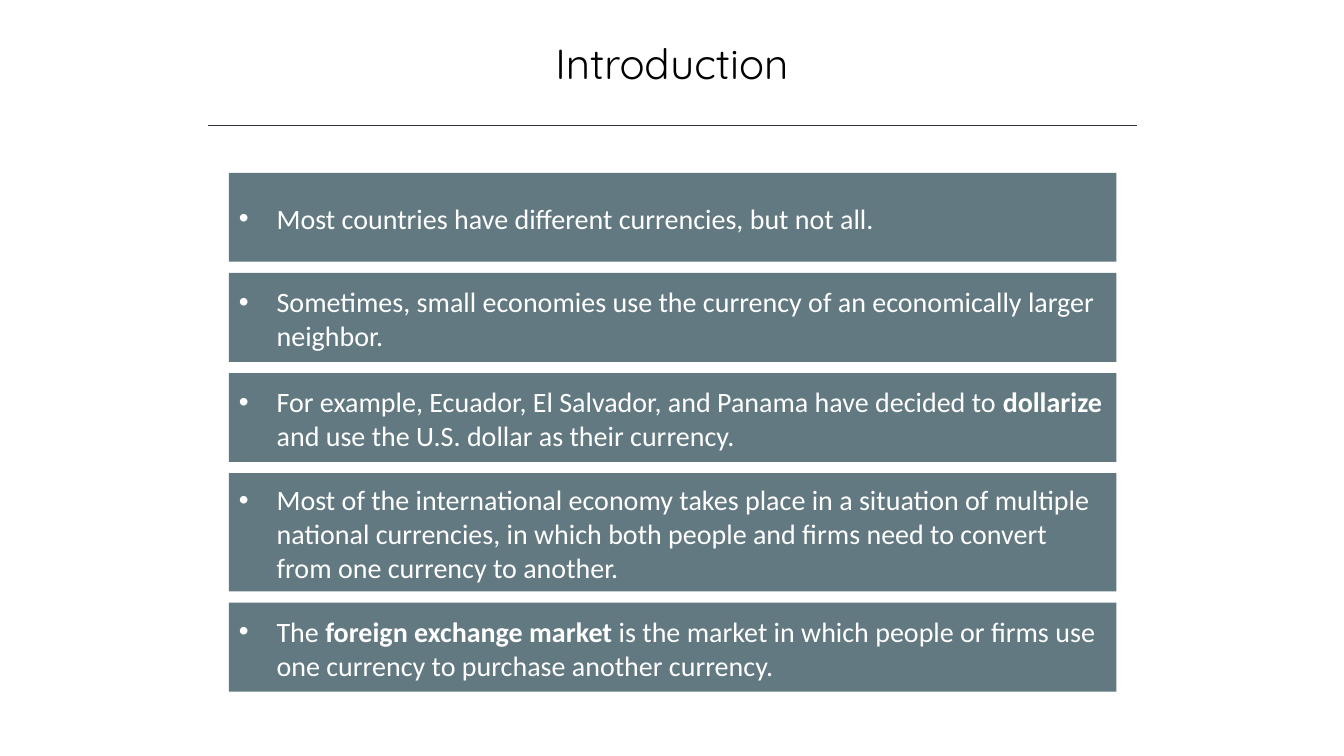
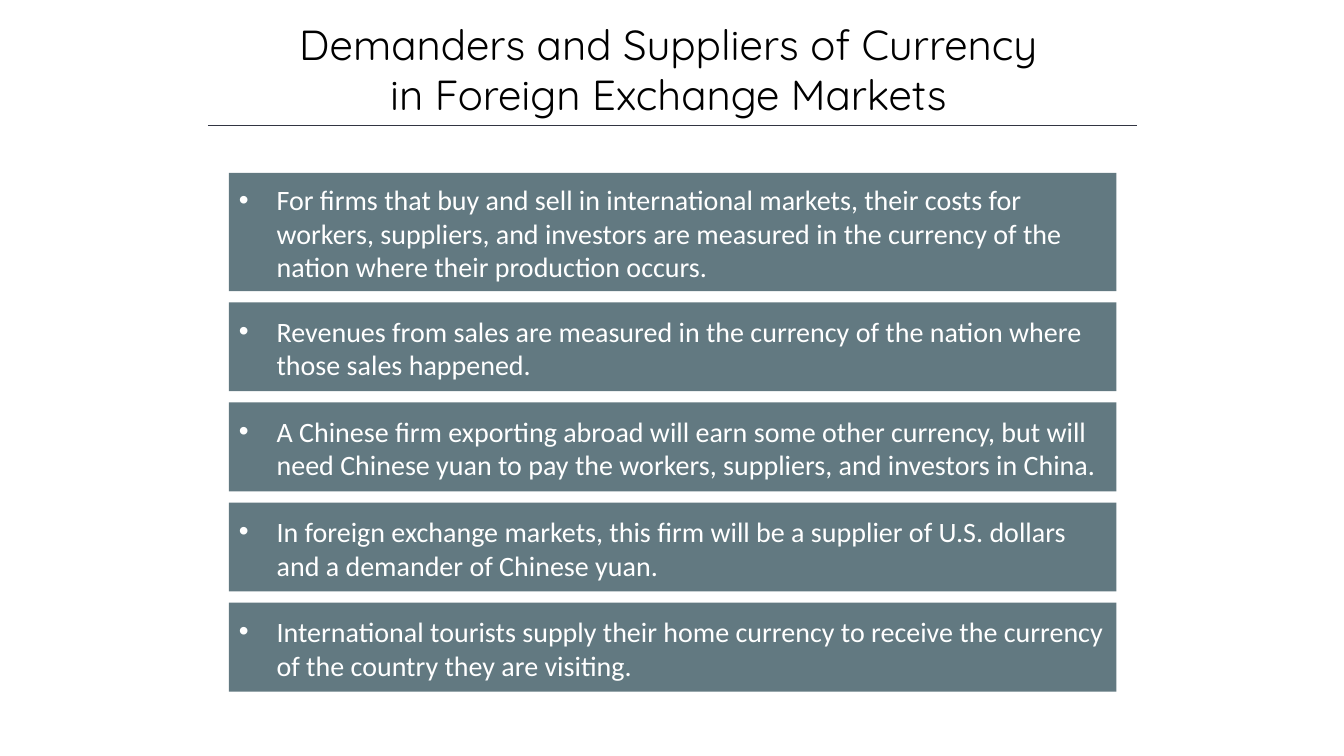
from dataclasses import dataclass

from lxml.etree import SubElement
from pptx import Presentation
from pptx.dml.color import RGBColor
from pptx.enum.shapes import MSO_CONNECTOR, MSO_SHAPE
from pptx.enum.text import MSO_ANCHOR, PP_ALIGN
from pptx.oxml.ns import qn
from pptx.util import Pt


@dataclass(frozen=True)
class Theme:
    ink: str = "000000"
    rule: str = "323542"
    card: str = "627981"
    on_card: str = "FFFFFF"
    title_font: str = "Quicksand"
    body_font: str = "Calibri"
    title_size: float = 30
    body_size: float = 20


T = Theme()
RULE = (148.5, 812, 89.5)  # left, right, y
CARDS = (163.5, 634, 494)  # left, width, bottom
CARD_H, TALL_H, GAP = 63.5, 84.5, 8
INDENT = 27


def add_run(p, text, *, font, size, color, bold=False):
    r = p.add_run()
    r.text = text
    r.font.name = font
    r.font.size = Pt(size)
    r.font.bold = bold
    r.font.color.rgb = RGBColor.from_string(color)


def add_title(s, lines, left, top):
    tb = s.shapes.add_textbox(Pt(left), Pt(top), Pt(720), Pt(44))
    tf = tb.text_frame
    tf.word_wrap = True
    for i, line in enumerate(lines):
        p = tf.add_paragraph() if i else tf.paragraphs[0]
        p.alignment = PP_ALIGN.CENTER
        add_run(p, line, font=T.title_font, size=T.title_size, color=T.ink)


def add_rule(s, left, right, y):
    line = s.shapes.add_connector(MSO_CONNECTOR.STRAIGHT,
                                  Pt(left), Pt(y), Pt(right), Pt(y))
    line.line.color.rgb = RGBColor.from_string(T.rule)
    line.line.width = Pt(1)
    SubElement(line._element.spPr, qn("a:effectLst"))


def set_bullet(p):
    pPr = p._p.get_or_add_pPr()
    pPr.set("marL", str(Pt(INDENT)))
    pPr.set("indent", str(-Pt(INDENT)))
    SubElement(pPr, qn("a:buFont")).set("typeface", "Arial")
    SubElement(pPr, qn("a:buChar")).set("char", "•")


def add_card(s, parts, left, top, width, height):
    """Every second part of the text is bold."""
    sp = s.shapes.add_shape(MSO_SHAPE.RECTANGLE,
                            Pt(left), Pt(top), Pt(width), Pt(height))
    sp.shadow.inherit = False
    sp.fill.solid()
    sp.fill.fore_color.rgb = RGBColor.from_string(T.card)
    sp.line.fill.background()
    tf = sp.text_frame
    tf.word_wrap = True
    tf.vertical_anchor = MSO_ANCHOR.MIDDLE
    tf.margin_top, tf.margin_bottom = Pt(5), Pt(3.6)
    p = tf.paragraphs[0]
    p.alignment = PP_ALIGN.LEFT
    set_bullet(p)
    for i, text in enumerate(parts):
        add_run(p, text, font=T.body_font, size=T.body_size,
                color=T.on_card, bold=i % 2 == 1)


def add_cards(s, cards, tall, left, width, bottom):
    """Stack the cards so that the last one ends at bottom."""
    heights = [TALL_H if i == tall else CARD_H for i in range(len(cards))]
    top = bottom - sum(heights) - GAP * (len(cards) - 1)
    for parts, height in zip(cards, heights):
        add_card(s, parts, left, top, width, height)
        top += height + GAP


def add_card_slide(prs, title, title_at, cards, tall):
    s = prs.slides.add_slide(prs.slide_layouts[6])
    add_title(s, title, *title_at)
    add_rule(s, *RULE)
    add_cards(s, cards, tall, *CARDS)


INTRODUCTION = [
    ["Most countries have different currencies, but not all."],
    ["Sometimes, small economies use the currency of an economically "
     "larger neighbor."],
    ["For example, Ecuador, El Salvador, and Panama have decided to ",
     "dollarize ", "and use the U.S. dollar as their currency."],
    ["Most of the international economy takes place in a situation of "
     "multiple national currencies, in which both people and firms need "
     "to convert from one currency to another."],
    ["The ", "foreign exchange market ",
     "is the market in which people or firms use one currency to purchase "
     "another currency."],
]

DEMANDERS = [
    ["For firms that buy and sell in international markets, their costs for "
     "workers, suppliers, and investors are measured in the currency of the "
     "nation where their production occurs."],
    ["Revenues from sales are measured in the currency of the nation where "
     "those sales happened."],
    ["A Chinese firm exporting abroad will earn some other currency, but will "
     "need Chinese yuan to pay the workers, suppliers, and investors in "
     "China."],
    ["In foreign exchange markets, this firm will be a supplier of U.S. "
     "dollars and a demander of Chinese yuan."],
    ["International tourists supply their home currency to receive the "
     "currency of the country they are visiting."],
]


def main():
    prs = Presentation()
    prs.slide_width, prs.slide_height = Pt(960), Pt(540)
    add_card_slide(prs, ["Introduction"], (120, 23), INTRODUCTION, tall=3)
    add_card_slide(prs, ["Demanders and Suppliers of Currency",
                         "in Foreign Exchange Markets"],
                   (117.5, 9.5), DEMANDERS, tall=0)
    prs.save("out.pptx")


if __name__ == "__main__":
    main()
